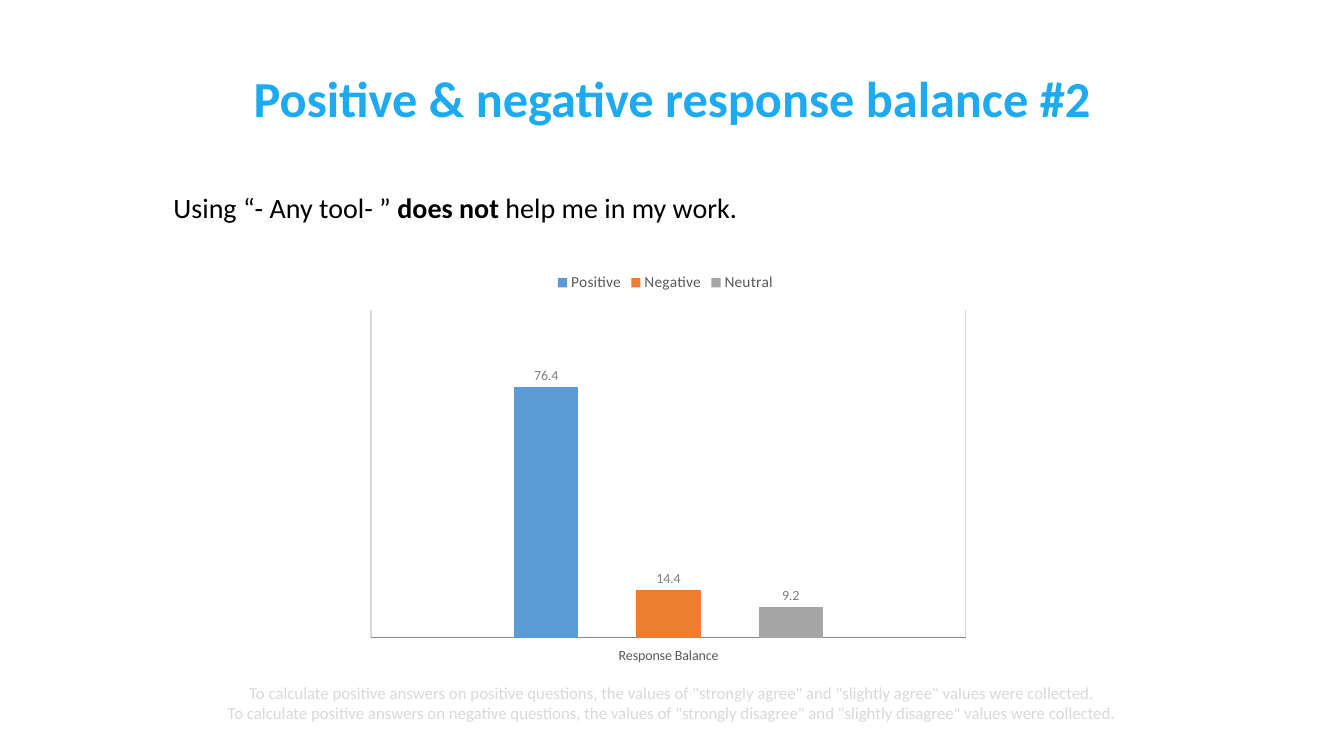
from dataclasses import dataclass

from lxml import etree
from pptx import Presentation
from pptx.chart.data import CategoryChartData
from pptx.dml.color import RGBColor
from pptx.enum.chart import XL_CHART_TYPE, XL_LABEL_POSITION, XL_LEGEND_POSITION, XL_TICK_LABEL_POSITION, XL_TICK_MARK
from pptx.enum.text import MSO_ANCHOR, PP_ALIGN
from pptx.oxml import parse_xml
from pptx.oxml.ns import nsdecls, qn
from pptx.util import Inches, Pt

COLUMNS = XL_CHART_TYPE.COLUMN_CLUSTERED
OUTSIDE_END = XL_LABEL_POSITION.OUTSIDE_END
LEGEND_TOP = XL_LEGEND_POSITION.TOP
NO_TICKS = XL_TICK_MARK.NONE
NO_LABELS = XL_TICK_LABEL_POSITION.NONE
LABELS_LOW = XL_TICK_LABEL_POSITION.LOW
TOP, MIDDLE, BOTTOM = MSO_ANCHOR.TOP, MSO_ANCHOR.MIDDLE, MSO_ANCHOR.BOTTOM
LEFT, CENTER = PP_ALIGN.LEFT, PP_ALIGN.CENTER


@dataclass(frozen=True)
class Theme:
    font: str = "Calibri"
    title: str = "1EAAF0"
    body: str = "000000"
    note: str = "D9D9D9"
    axis_text: str = "595959"
    axis_line: str = "888888"
    grid: str = "D9D9D9"
    value_label: str = "808080"
    title_size: int = 36
    body_size: int = 20
    note_size: int = 12
    legend_size: int = 11
    chart_size: int = 10


class SlideBuilder:
    def __init__(self, presentation, theme):
        self.theme = theme
        self.slide = presentation.slides.add_slide(presentation.slide_layouts[6])

    def style_font(self, font, size, color, bold=False):
        font.name = self.theme.font
        font.size = Pt(size)
        font.bold = bold
        font.color.rgb = RGBColor.from_string(color)

    def style_line(self, line, color):
        line.color.rgb = RGBColor.from_string(color)
        line.width = Pt(1)

    def add_text(self, box, paragraphs, size, color, anchor=TOP, align=CENTER,
                 line_spacing=None, space_before=None):
        """Each paragraph is a list of (text, bold) runs."""
        shape = self.slide.shapes.add_textbox(*map(Inches, box))
        frame = shape.text_frame
        frame.word_wrap = True
        frame.vertical_anchor = anchor
        frame.margin_left = frame.margin_right = Inches(0.05)
        frame.margin_top = frame.margin_bottom = Inches(0.05)
        for index, runs in enumerate(paragraphs):
            paragraph = frame.add_paragraph() if index else frame.paragraphs[0]
            paragraph.alignment = align
            paragraph.line_spacing = line_spacing
            paragraph.space_before = space_before
            for text, bold in runs:
                run = paragraph.add_run()
                run.text = text
                self.style_font(run.font, size, color, bold)

    def add_column_chart(self, box, category, series_rows, plot_box):
        """Each series row is (name, value, color, number format)."""
        theme = self.theme
        data = CategoryChartData()
        data.categories = [category]
        for name, value, _, _ in series_rows:
            data.add_series(name, [value])
        chart = self.slide.shapes.add_chart(COLUMNS, *map(Inches, box), data).chart
        chart.has_title = False
        self.style_font(chart.font, theme.chart_size, theme.body)

        # Columns and value labels
        plot = chart.plots[0]
        plot.gap_width, plot.overlap = 444, -90
        plot.vary_by_categories = False
        for series, (_, _, color, number_format) in zip(plot.series, series_rows):
            series.format.fill.solid()
            series.format.fill.fore_color.rgb = RGBColor.from_string(color)
            labels = series.data_labels
            labels.show_value = True
            labels.position = OUTSIDE_END
            labels.number_format = number_format
            labels.number_format_is_linked = False
            self.style_font(labels.font, theme.chart_size, theme.value_label)

        # Axes
        category_axis, value_axis = chart.category_axis, chart.value_axis
        for axis in (category_axis, value_axis):
            axis.major_tick_mark = axis.minor_tick_mark = NO_TICKS
        category_axis.tick_label_position = LABELS_LOW
        category_axis.has_major_gridlines = True
        self.style_font(category_axis.tick_labels.font, theme.chart_size, theme.axis_text)
        self.style_line(category_axis.format.line, theme.axis_line)
        self.style_line(category_axis.major_gridlines.format.line, theme.grid)
        value_axis.minimum_scale, value_axis.maximum_scale = 0, 100
        value_axis.major_unit = 20
        value_axis.has_major_gridlines = False
        value_axis.tick_label_position = NO_LABELS
        value_axis.format.line.fill.background()

        # Legend
        chart.has_legend = True
        chart.legend.position = LEGEND_TOP
        chart.legend.include_in_layout = True
        self.style_font(chart.legend.font, theme.legend_size, theme.axis_text)

        self.place_plot(plot, plot_box)

    def place_plot(self, plot, plot_box):
        """Fix the inner plot area, given as fractions of the chart."""
        plot_area = plot._element.getparent()
        for old_layout in plot_area.findall(qn("c:layout")):
            plot_area.remove(old_layout)
        layout = parse_xml(f"<c:layout {nsdecls('c')}><c:manualLayout/></c:layout>")
        settings = [("layoutTarget", "inner"), ("xMode", "edge"), ("yMode", "edge")]
        settings += zip("xywh", plot_box)
        for tag, value in settings:
            etree.SubElement(layout[0], qn(f"c:{tag}")).set("val", str(value))
        plot_area.insert(0, layout)


def main():
    presentation = Presentation()
    presentation.slide_width, presentation.slide_height = Inches(13.33), Inches(7.5)
    theme = Theme()
    builder = SlideBuilder(presentation, theme)

    # Title and survey statement
    builder.add_text((1.67, 0.67, 10, 0.65),
                     [[("Positive & negative response balance #2", True)]],
                     theme.title_size, theme.title, anchor=BOTTOM, line_spacing=0.9)
    builder.add_text((1.67, 1.67, 10, 1.5),
                     [[("Using “- Any tool- ” ", False), ("does not", True),
                       (" help me in my work.", False)]],
                     theme.body_size, theme.body, align=LEFT,
                     line_spacing=1.5, space_before=Pt(10))

    # Response chart
    builder.add_column_chart(
        (3.56, 2.6, 6.08, 3.98), "Response Balance",
        [("Positive", 76.4, "5B9BD5", "0.####"),
         ("Negative", 14.4, "ED7D31", "0.#"),
         ("Neutral", 9.2, "A5A5A5", "0.##")],
        plot_box=(0.02, 0.12, 0.97, 0.82))

    # Calculation notes
    notes = [f'To calculate positive answers on {question} questions, the values of '
             f'"strongly {answer}" and "slightly {answer}" values were collected.'
             for question, answer in (("positive", "agree"), ("negative", "disagree"))]
    builder.add_text((0.05, 6.73, 13.23, 0.48), [[(note, False)] for note in notes],
                     theme.note_size, theme.note, anchor=MIDDLE)

    presentation.save("out.pptx")


if __name__ == "__main__":
    main()
